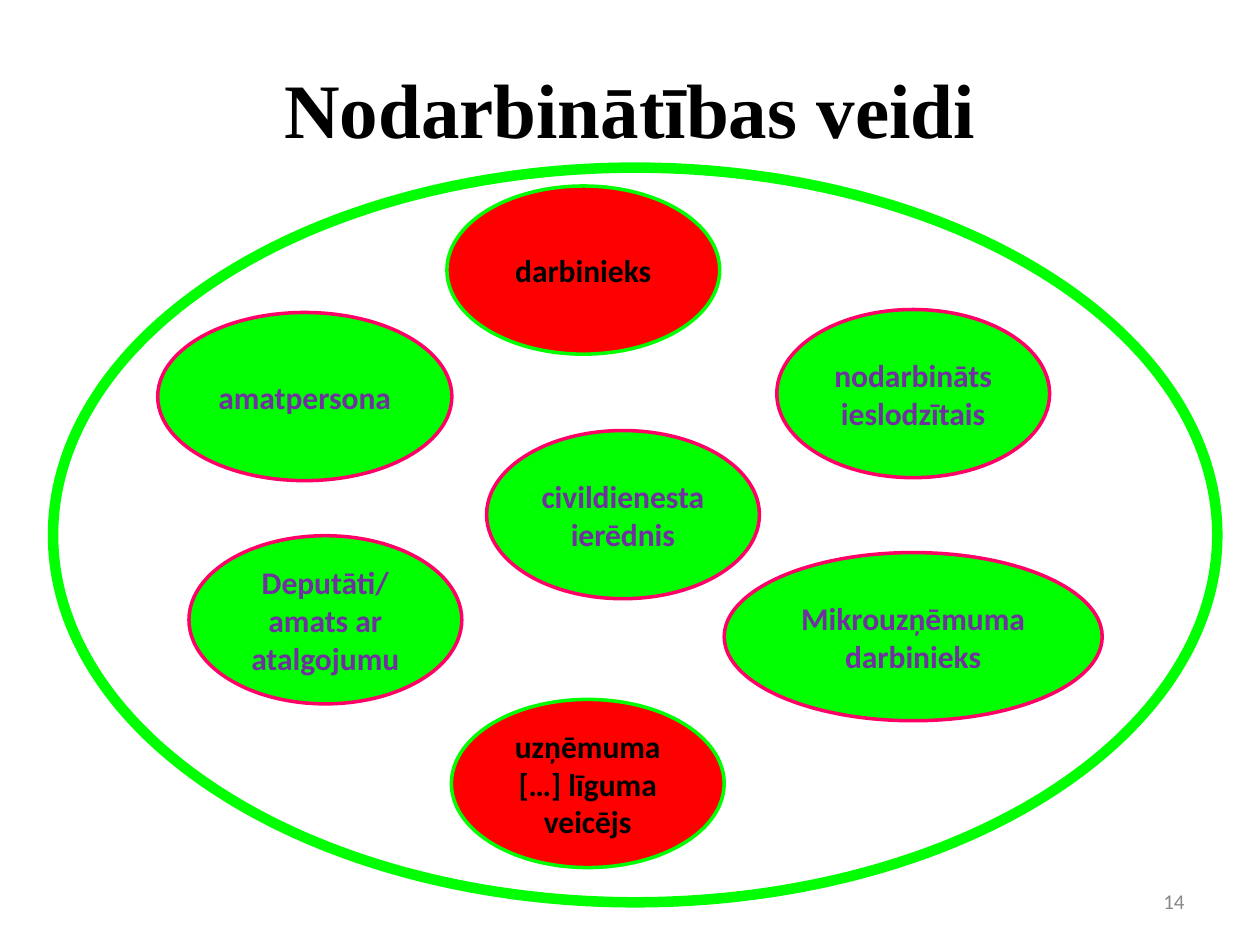
from pptx import Presentation
from pptx.dml.color import RGBColor
from pptx.enum.shapes import MSO_SHAPE as Shape
from pptx.enum.text import MSO_ANCHOR as Anchor, PP_ALIGN as Align
from pptx.util import Cm, Pt

COLORS = {
    "green": "00FF00",
    "red": "FF0000",
    "pink": "FF0066",
    "purple": "7030A0",
    "black": "000000",
    "gray": "888888",
}
TITLE = {"name": "Times New Roman", "size": Pt(44), "bold": True}
LABEL = {"name": "Calibri", "size": Pt(18), "bold": True}
NUMBER = {"name": "Calibri", "size": Pt(12), "bold": False}
STYLES = {
    "public": {"fill": "green", "line": "pink", "text": "purple"},
    "private": {"fill": "red", "line": "green", "text": "black"},
}
OVAL_HEIGHT = 3.39
OVALS = [
    (3.18, 6.3, 5.93, "public", ["amatpersona"]),
    (3.81, 10.8, 5.5, "public", ["Deputāti/", "amats ar atalgojumu"]),
    (15.66, 6.24, 5.5, "public", ["nodarbināts ieslodzītais"]),
    (14.6, 11.14, 7.62, "public", ["Mikrouzņēmuma darbinieks"]),
    (9.01, 3.75, 5.5, "private", ["darbinieks"]),
    (9.81, 8.68, 5.5, "public", ["civildienesta ierēdnis"]),
    (9.1, 14.1, 5.5, "private", ["uzņēmuma […] līguma veicējs"]),
]


def write_text(shape, lines, font_format, color, align=Align.CENTER):
    frame = shape.text_frame
    frame.word_wrap = True
    frame.vertical_anchor = Anchor.MIDDLE
    for index, line in enumerate(lines):
        para = frame.add_paragraph() if index else frame.paragraphs[0]
        para.alignment = align
        span = para.add_run()
        span.text = line
        for name, value in font_format.items():
            setattr(span.font, name, value)
        span.font.color.rgb = RGBColor.from_string(COLORS[color])


def add_oval(page, left, top, width, height, line, weight, fill=None):
    oval = page.shapes.add_shape(Shape.OVAL, Cm(left), Cm(top), Cm(width), Cm(height))
    oval.shadow.inherit = False
    if fill:
        oval.fill.solid()
        oval.fill.fore_color.rgb = RGBColor.from_string(COLORS[fill])
    else:
        oval.fill.background()
    oval.line.color.rgb = RGBColor.from_string(COLORS[line])
    oval.line.width = Pt(weight)
    return oval


deck = Presentation()
deck.slide_width = Cm(25.4)
deck.slide_height = Cm(19.05)
page = deck.slides.add_slide(deck.slide_layouts[6])

title_box = page.shapes.add_textbox(Cm(1.27), Cm(0.76), Cm(22.86), Cm(2.84))
write_text(title_box, ["Nodarbinātības veidi"], TITLE, "black")

add_oval(page, 1.07, 3.38, 23.47, 14.81, "green", 6)

for left, top, width, kind, lines in OVALS:
    style = STYLES[kind]
    oval = add_oval(page, left, top, width, OVAL_HEIGHT, style["line"], 2, style["fill"])
    write_text(oval, lines, LABEL, style["text"])

number_box = page.shapes.add_textbox(Cm(18.2), Cm(17.65), Cm(5.93), Cm(1.02))
write_text(number_box, ["14"], NUMBER, "gray", Align.RIGHT)

deck.save("out.pptx")
